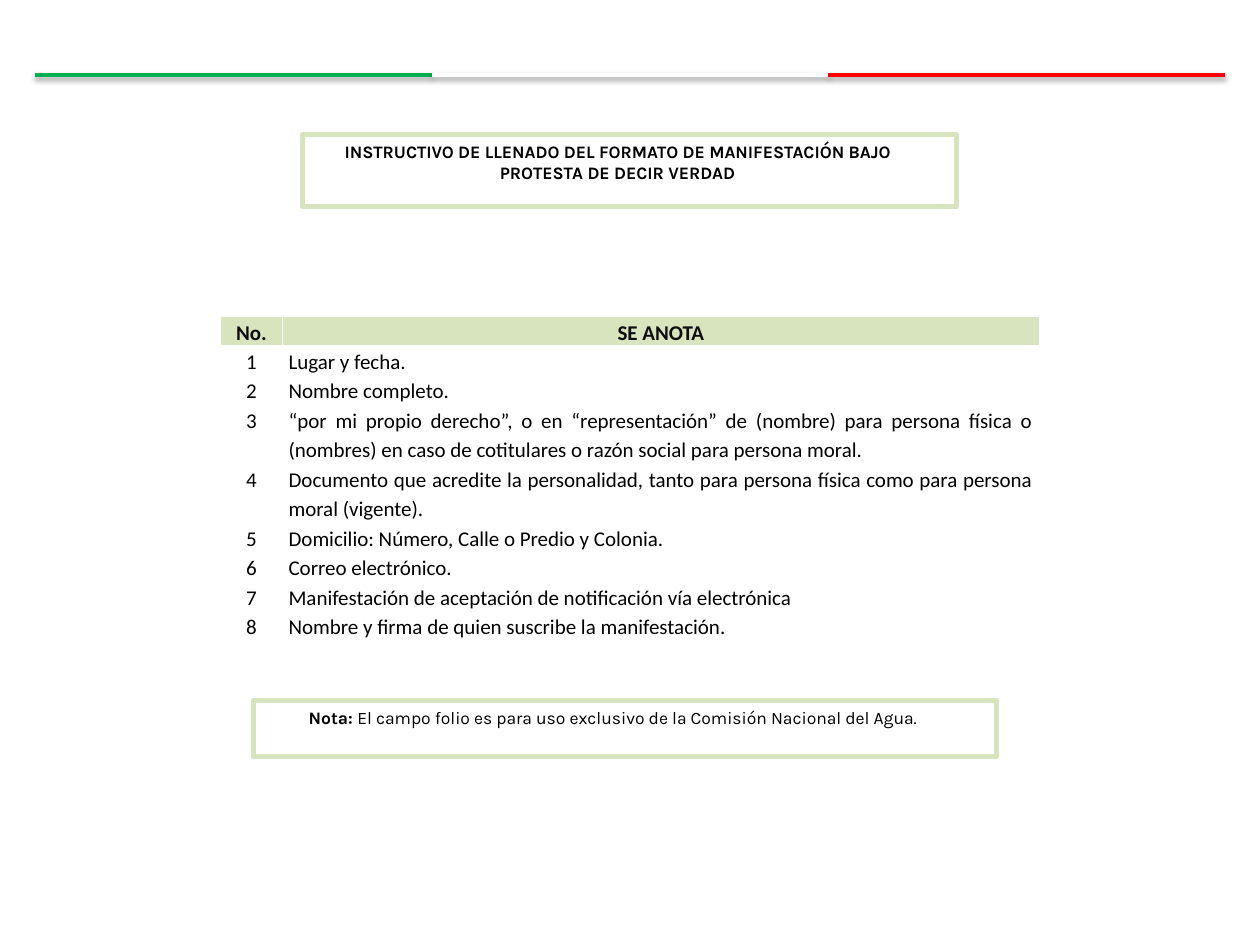
import pptx
import pptx.util
import pptx.oxml
import pptx.oxml.ns
import pptx.dml.color
import pptx.enum.text
import pptx.enum.shapes

Pt = pptx.util.Pt
ALIGN = pptx.enum.text.PP_ALIGN
ANCHOR = pptx.enum.text.MSO_ANCHOR

COLORS = {"green": "00B050", "white": "FFFFFF", "red": "FF0000",
          "pale": "D7E4BD", "head": "0D0D0D", "ink": "000000"}
FLAG = ["green", "white", "red"]
TITLE = [("INSTRUCTIVO DE LLENADO DEL FORMATO DE MANIFESTACIÓN BAJO "
          "PROTESTA DE DECIR VERDAD", True)]
NOTE = [("Nota: ", True),
        ("El campo folio es para uso exclusivo de la Comisión Nacional del Agua.", False)]
HEADS = ["No.", "SE ANOTA"]
# Each step: text, number of lines it takes
STEPS = [
    ("Lugar y fecha.", 1),
    ("Nombre completo.", 1),
    ("“por mi propio derecho”, o en “representación” de (nombre) para persona "
     "física o (nombres) en caso de cotitulares o razón social para persona moral.", 2),
    ("Documento que acredite la personalidad, tanto para persona física como "
     "para persona moral (vigente).", 2),
    ("Domicilio: Número, Calle o Predio y Colonia.", 1),
    ("Correo electrónico.", 1),
    ("Manifestación de aceptación de notificación vía electrónica", 1),
    ("Nombre y firma de quien suscribe la manifestación.", 1),
]
WIDTHS = [35.3, 432.7]
LINE = 16.5


def rgb(name):
    return pptx.dml.color.RGBColor.from_string(COLORS[name])


def parse(xml):
    return pptx.oxml.parse_xml(
        xml.replace(">", " " + pptx.oxml.ns.nsdecls("a") + ">", 1))


def add_run(para, text, font, size, bold, color="ink"):
    run = para.add_run()
    run.text = text
    run.font.name, run.font.size, run.font.bold = font, Pt(size), bold
    run.font.color.rgb = rgb(color)


def fill_box(box, place, runs):
    """Place a framed box and write its centred text."""
    box.left, box.top, box.width, box.height = map(Pt, place)
    box.fill.background()
    box.line.color.rgb = rgb("pale")
    box.line.width = Pt(3)
    frame = box.text_frame
    frame.word_wrap = True
    frame.auto_size = pptx.enum.text.MSO_AUTO_SIZE.NONE
    frame.vertical_anchor = ANCHOR.TOP
    frame.margin_right = Pt(21)
    para = frame.paragraphs[0]
    para.alignment = ALIGN.CENTER
    para.space_after = Pt(8)
    for text, bold in runs:
        add_run(para, text, "Karla", 10, bold)


def add_flag(slide, left=20, right=700, top=43):
    step = (right - left) / len(FLAG)
    for i, color in enumerate(FLAG):
        start = left + i * step
        line = slide.shapes.add_connector(
            pptx.enum.shapes.MSO_CONNECTOR.STRAIGHT,
            Pt(start), Pt(top), Pt(start + step), Pt(top))
        line.line.color.rgb = rgb(color)
        line.line.width = Pt(2)
        line._element.spPr.append(parse(
            f'<a:effectLst><a:outerShdw blurRad="{Pt(3.1)}" dist="{Pt(1.6)}" '
            'dir="5400000" rotWithShape="0"><a:srgbClr val="000000">'
            '<a:alpha val="38000"/></a:srgbClr></a:outerShdw></a:effectLst>'))


def fill_cell(cell, text, align, head):
    props = cell._tc.get_or_add_tcPr()
    for side in "LRTB":
        props.append(parse(
            f'<a:ln{side} w="{Pt(1)}"><a:solidFill><a:srgbClr '
            f'val="{COLORS["white"]}"/></a:solidFill></a:ln{side}>'))
    if head:
        cell.fill.solid()
        cell.fill.fore_color.rgb = rgb("pale")
    else:
        cell.fill.background()
    cell.margin_left = cell.margin_right = Pt(3.6)
    cell.margin_top = cell.margin_bottom = 0
    cell.vertical_anchor = ANCHOR.MIDDLE if head else ANCHOR.TOP
    para = cell.text_frame.paragraphs[0]
    para.alignment = align
    para.line_spacing = 1.15
    add_run(para, text, "Calibri", 12, head, "head" if head else "ink")


def add_steps(slide):
    rows = [HEADS] + [[str(i), text] for i, (text, _) in enumerate(STEPS, 1)]
    lines = [1] + [count for _, count in STEPS]
    table = slide.shapes.add_table(
        len(rows), len(HEADS), Pt(126), Pt(180.7),
        Pt(sum(WIDTHS)), Pt(LINE * sum(lines))).table
    table.horz_banding = False
    for col, width in zip(table.columns, WIDTHS):
        col.width = Pt(width)
    for r, (row, count) in enumerate(zip(rows, lines)):
        table.rows[r].height = Pt(LINE * count)
        for c, text in enumerate(row):
            align = ALIGN.JUSTIFY if r and c else ALIGN.CENTER
            fill_cell(table.cell(r, c), text, align, r == 0)


def main():
    deck = pptx.Presentation()
    deck.slide_width, deck.slide_height = Pt(720), Pt(540)
    slide = deck.slides.add_slide(deck.slide_layouts[5])
    add_flag(slide)
    add_steps(slide)
    fill_box(slide.shapes.title, (173, 77, 373.5, 41), TITLE)
    note = slide.shapes.add_shape(
        pptx.enum.shapes.MSO_SHAPE.RECTANGLE, 0, 0, 0, 0)
    note.shadow.inherit = False
    fill_box(note, (144.7, 400.5, 424.8, 31.7), NOTE)
    deck.save("out.pptx")


if __name__ == "__main__":
    main()
